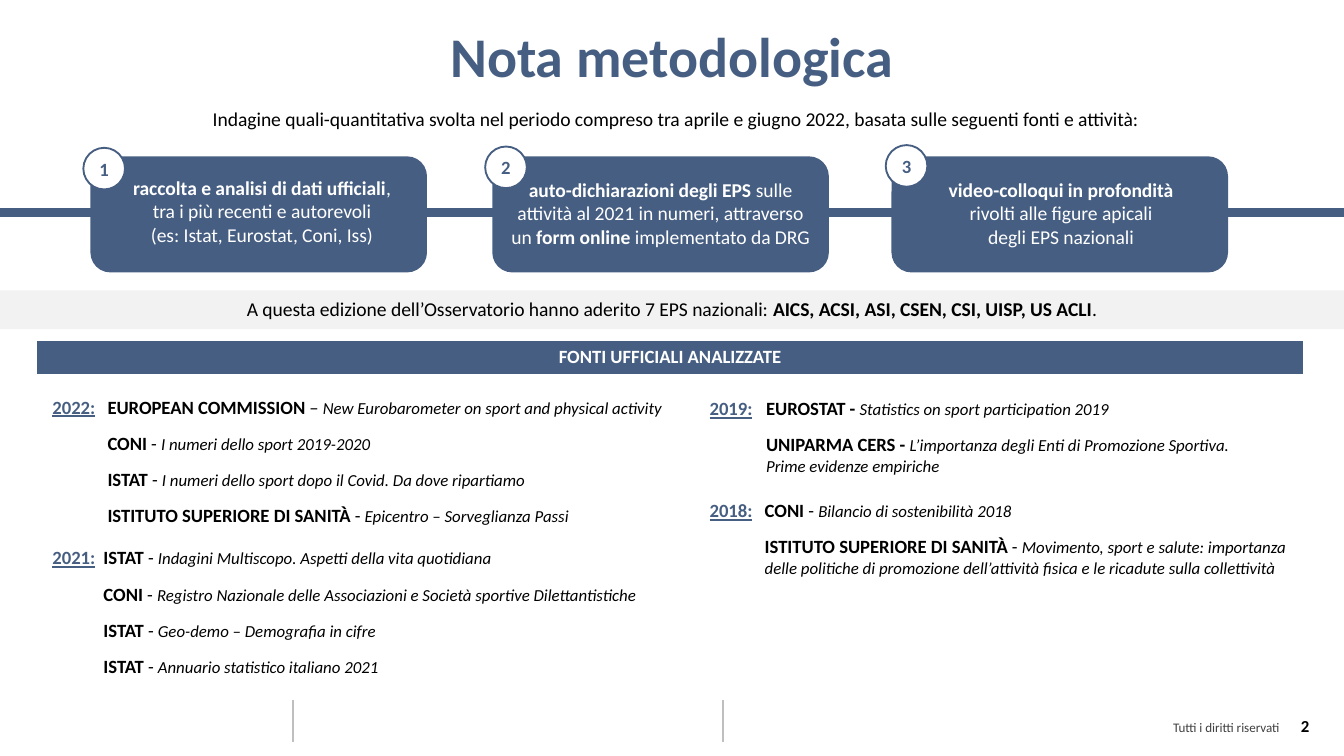
import pptx
import pptx.util
import pptx.dml.color
import pptx.enum.shapes
import pptx.enum.text
import pptx.oxml
import pptx.oxml.ns

BLUE, BLACK, WHITE = "465E82", "000000", "FFFFFF"
FONT = "Calibri"
WIDE = 10
HIGH = WIDE * 9 / 16

TITLE = "Nota metodologica"
INTRO = ("Indagine quali-quantitativa svolta nel periodo compreso tra aprile e giugno 2022, "
         "basata sulle seguenti fonti e attività:")
# Each text is a list of paragraphs, each paragraph a list of (text, bold).
STEPS = [
    {"left": 0.68, "disc": (0.62, 1.1), "inset": (0.25, 0, 0.2, 0.05), "text": [
        [("raccolta e analisi di dati ufficiali", True),
         (", tra i più recenti e autorevoli", False)],
        [("(es: Istat, Eurostat, Coni, Iss)", False)]]},
    {"left": 3.67, "disc": (3.61, 1.09), "inset": (0.06, 0, 0.06, 0.02), "text": [
        [("auto-dichiarazioni degli EPS", True),
         (" sulle attività al 2021 in numeri, attraverso un ", False),
         ("form online ", True), ("implementato da DRG", False)]]},
    {"left": 6.64, "disc": (6.59, 1.08), "inset": (0.24, 0, 0.22, 0.02), "text": [
        [("video-colloqui in profondità ", True), ("rivolti alle figure apicali", False)],
        [("degli EPS nazionali", False)]]},
]
MEMBERS = [("A questa edizione dell’Osservatorio hanno aderito 7 EPS nazionali: ", False),
           ("AICS, ACSI, ASI, CSEN, CSI, UISP, US ACLI", True), (".", False)]
HEADER = "FONTI UFFICIALI ANALIZZATE"
# Each source is (body, dash, work).
YEARS = [
    {"year": "2022:", "at": (0.29, 2.9), "width": 5.52, "indent": 0.41, "rows": [
        ("EUROPEAN COMMISSION", " – ", "New Eurobarometer on sport and physical activity"),
        ("CONI", " - ", "I numeri dello sport 2019-2020"),
        ("ISTAT", " - ", "I numeri dello sport dopo il Covid. Da dove ripartiamo"),
        ("ISTITUTO SUPERIORE DI SANITÀ", " - ", "Epicentro – Sorveglianza Passi")]},
    {"year": "2021:", "at": (0.29, 4.02), "width": 4.99, "indent": 0.38, "rows": [
        ("ISTAT", " - ", "Indagini Multiscopo. Aspetti della vita quotidiana"),
        ("CONI", " - ",
         "Registro Nazionale delle Associazioni e Società sportive Dilettantistiche"),
        ("ISTAT", " - ", "Geo-demo – Demografia in cifre"),
        ("ISTAT", " - ", "Annuario statistico italiano 2021")]},
    {"year": "2019:", "at": (5.18, 2.91), "width": 4.73, "indent": 0.42, "rows": [
        ("EUROSTAT -", " ", "Statistics on sport participation 2019"),
        ("UNIPARMA CERS -", " ",
         "L’importanza degli Enti di Promozione Sportiva.\nPrime evidenze empiriche")]},
    {"year": "2018:", "at": (5.18, 3.67), "width": 4.73, "indent": 0.41, "rows": [
        ("CONI", " - ", "Bilancio di sostenibilità 2018"),
        ("ISTITUTO SUPERIORE DI SANITÀ", " - ",
         "Movimento, sport e salute: importanza delle politiche di promozione "
         "dell’attività fisica e le ricadute sulla collettività")]},
]
ROW = 0.27

inch = pptx.util.Inches
SHAPE = pptx.enum.shapes.MSO_SHAPE
ALIGN = pptx.enum.text.PP_ALIGN
ANCHOR = pptx.enum.text.MSO_ANCHOR


def tint(code):
    return pptx.dml.color.RGBColor.from_string(code)


def put(para, text, size, color=BLACK, **style):
    run = para.add_run()
    run.text = text
    style = {"name": FONT, "size": pptx.util.Pt(size), "bold": False, **style}
    for key, value in style.items():
        setattr(run.font, key, value)
    run.font.color.rgb = tint(color)


def write(frame, paras, size, color=BLACK, align=ALIGN.CENTER, anchor=ANCHOR.TOP,
          inset=(0.1, 0.05, 0.1, 0.05)):
    """Fill a text frame; inset is (left, top, right, bottom)."""
    frame.word_wrap = True
    frame.vertical_anchor = anchor
    for side, gap in zip(("left", "top", "right", "bottom"), inset):
        setattr(frame, f"margin_{side}", inch(gap))
    for n, runs in enumerate(paras):
        para = frame.add_paragraph() if n else frame.paragraphs[0]
        para.alignment = align
        for text, bold in runs:
            put(para, text, size, color, bold=bold)


def label(slide, box, text, size, bold=False, **look):
    frame = slide.shapes.add_textbox(*map(inch, box)).text_frame
    write(frame, [[(text, bold)]], size, **look)


def block(slide, kind, box, fill, edge=None):
    shape = slide.shapes.add_shape(kind, *map(inch, box))
    shape.shadow.inherit = False
    shape.fill.solid()
    shape.fill.fore_color.rgb = tint(fill)
    if edge:
        shape.line.color.rgb = tint(edge)
        shape.line.width = pptx.util.Pt(1)
    else:
        shape.line.fill.background()
    return shape


def rule(slide, ends, color, width):
    line = slide.shapes.add_connector(
        pptx.enum.shapes.MSO_CONNECTOR.STRAIGHT, *map(inch, ends))
    line.line.color.rgb = tint(color)
    line.line.width = pptx.util.Pt(width)
    line._element.spPr.append(pptx.oxml.parse_xml(
        f"<a:effectLst {pptx.oxml.ns.nsdecls('a')}/>"))


def grid(slide, at, width, count):
    """Add a plain one-column table and return its cells."""
    table = slide.shapes.add_table(
        count, 1, *map(inch, (*at, width, ROW * count))).table
    for key in ("first_row", "horz_banding"):
        setattr(table, key, False)
    cells = [table.cell(n, 0) for n in range(count)]
    for cell in cells:
        cell.fill.background()
        cell.vertical_anchor = ANCHOR.MIDDLE
    return cells


def banner(slide):
    cell = grid(slide, (0.26, 2.52), 9.45, 1)[0]
    props = cell._tc.get_or_add_tcPr()
    for n, side in enumerate("LRT"):
        props.insert(n, pptx.oxml.parse_xml(
            f'<a:ln{side} {pptx.oxml.ns.nsdecls("a")} w="{pptx.util.Pt(2.25)}"><a:solidFill>'
            f'<a:srgbClr val="{WHITE}"/></a:solidFill></a:ln{side}>'))
    cell.fill.solid()
    cell.fill.fore_color.rgb = tint(BLUE)
    para = cell.text_frame.paragraphs[0]
    para.alignment = ALIGN.CENTER
    put(para, HEADER, 10, WHITE, bold=True)


def shift(para, indent, tab=False):
    """Indent a paragraph, or give it a tab stop at the same place."""
    props = para._p.get_or_add_pPr()
    if tab:
        props.append(pptx.oxml.parse_xml(
            f'<a:tabLst {pptx.oxml.ns.nsdecls("a")}>'
            f'<a:tab pos="{inch(indent)}" algn="l"/></a:tabLst>'))
    else:
        props.set("marL", str(inch(indent)))
        props.set("indent", "0")


def listing(slide, group):
    cells = grid(slide, group["at"], group["width"], len(group["rows"]))
    for n, (cell, (body, dash, work)) in enumerate(zip(cells, group["rows"])):
        para = cell.text_frame.paragraphs[0]
        shift(para, group["indent"], tab=n == 0)
        if n == 0:
            put(para, group["year"], 10, BLUE, bold=True, underline=True)
            put(para, "\t", 10)
        put(para, body, 10, bold=True)
        put(para, dash, 10)
        first, *rest = work.split("\n")
        put(para, first, 9, italic=True)
        for text in rest:
            para = cell.text_frame.add_paragraph()
            shift(para, group["indent"])
            put(para, text, 9, italic=True)


def main():
    deck = pptx.Presentation()
    deck.slide_width, deck.slide_height = inch(WIDE), inch(HIGH)
    slide = deck.slides.add_slide(deck.slide_layouts[5])

    title = slide.shapes.title
    place = zip(("left", "top", "width", "height"), (0, 0.11, WIDE, 0.82))
    for key, value in place:
        setattr(title, key, inch(value))
    write(title.text_frame, [[(TITLE, True)]], 30, BLUE)
    label(slide, (0.18, 0.75, 9.7, 0.28), INTRO, 10.5)

    for x in (2.18, 5.38):
        rule(slide, (x, 5.21, x, 5.52), "BFBFBF", 1)
    label(slide, (7.69, 5.31, 1.9, 0.19), "Tutti i diritti riservati", 7,
          color="404040", align=ALIGN.RIGHT, inset=(0.07, 0.04, 0.07, 0.04))
    label(slide, (9.32, 5.28, 0.52, 0.3), "2", 9, bold=True, align=ALIGN.RIGHT)

    rule(slide, (0, 1.58, WIDE, 1.58), BLUE, 4.5)
    for n, step in enumerate(STEPS, 1):
        card = block(slide, SHAPE.ROUNDED_RECTANGLE, (step["left"], 1.17, 2.49, 0.85),
                     BLUE, BLUE)
        write(card.text_frame, step["text"], 10.5, WHITE, anchor=ANCHOR.MIDDLE,
              inset=step["inset"])
        disc = block(slide, SHAPE.OVAL, (*step["disc"], 0.31, 0.31), WHITE, BLUE)
        write(disc.text_frame, [[(str(n), True)]], 10, BLUE, anchor=ANCHOR.MIDDLE,
              inset=(0, 0, 0, 0))

    band = block(slide, SHAPE.RECTANGLE, (0, 2.16, WIDE, 0.29), "F2F2F2")
    write(band.text_frame, [MEMBERS], 10.5, anchor=ANCHOR.MIDDLE, inset=(0.1, 0.03, 0.1, 0.05))
    banner(slide)
    for group in YEARS:
        listing(slide, group)
    deck.save("out.pptx")


if __name__ == "__main__":
    main()
